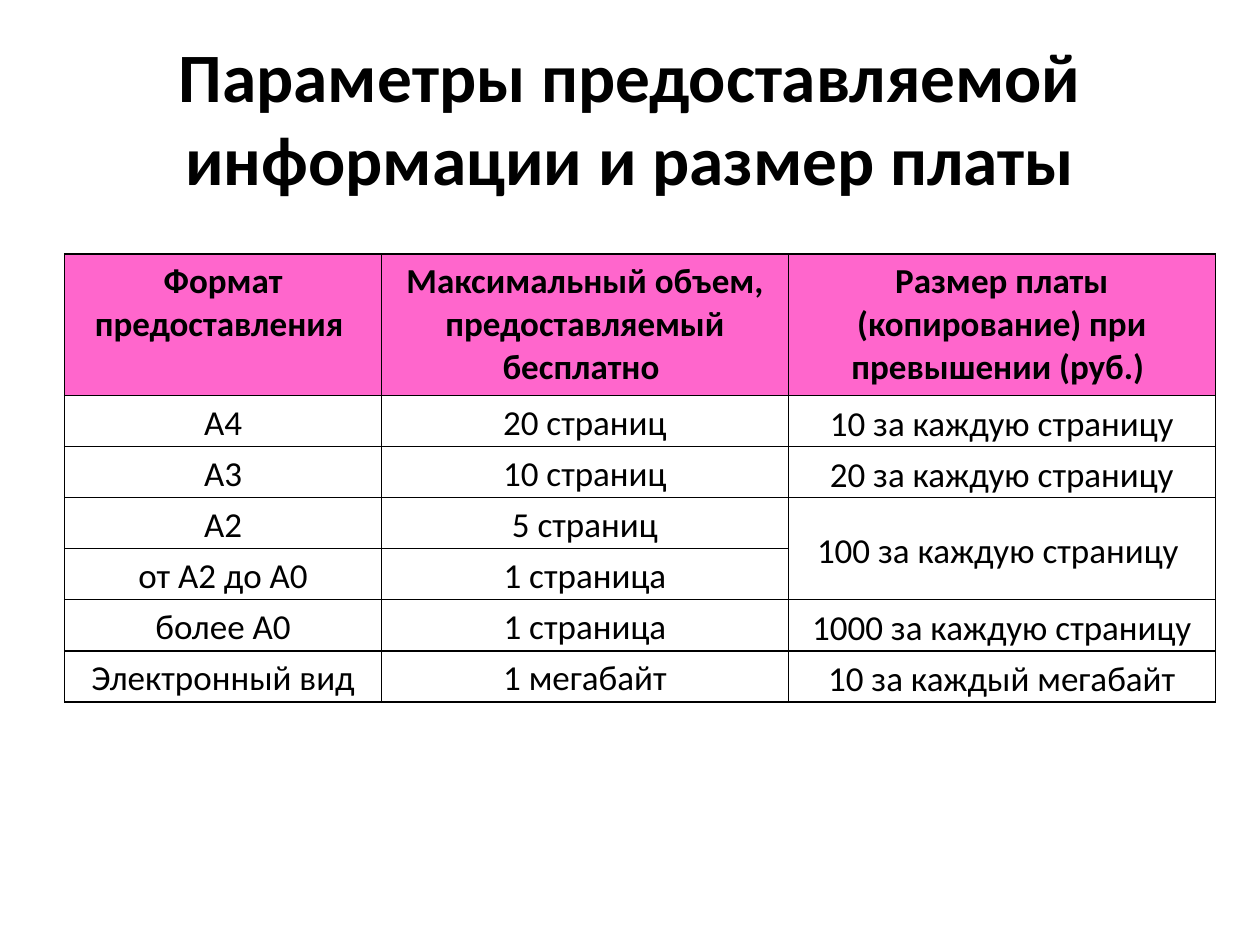
from lxml import etree
from pptx import Presentation
from pptx.dml.color import RGBColor
from pptx.enum import text as t
from pptx.oxml import ns
from pptx.util import Pt

FONT = "Calibri"
BLACK, PINK = "000000", "FF66CC"
COLUMN_WIDTHS = (181.2, 232.4, 244)
HEADER_HEIGHT, ROW_HEIGHT = 80.6, 29.2
HEADERS = (
    "Формат предоставления ",
    "Максимальный объем, предоставляемый бесплатно ",
    "Размер платы (копирование) при превышении (руб.) ",
)
TARIFFS = (
    ("А4", "20 страниц", "10 за каждую страницу"),
    ("А3", "10 страниц", "20 за каждую страницу"),
    ("А2", "5 страниц", "100 за каждую страницу "),
    ("от А2 до А0", "1 страница", ""),
    ("более А0", "1 страница", "1000 за каждую страницу"),
    ("Электронный вид", "1 мегабайт", "10 за каждый мегабайт"),
)


def color(hex_code):
    return RGBColor.from_string(hex_code)


def format_text(frame, size, bold):
    for paragraph in frame.paragraphs:
        paragraph.alignment = t.PP_ALIGN.CENTER
        for run in paragraph.runs:
            run.font.name = FONT
            run.font.size = Pt(size)
            run.font.bold = bold
            run.font.color.rgb = color(BLACK)


def add_borders(cell):
    properties = cell._tc.get_or_add_tcPr()
    for side in ("lnL", "lnR", "lnT", "lnB"):
        border = etree.SubElement(properties, ns.qn(f"a:{side}"), w=str(Pt(1)))
        fill = etree.SubElement(border, ns.qn("a:solidFill"))
        etree.SubElement(fill, ns.qn("a:srgbClr"), val=BLACK)


def format_header(cell):
    format_text(cell.text_frame, 20, True)
    cell.fill.solid()
    cell.fill.fore_color.rgb = color(PINK)


def format_tariff(cell, is_price):
    format_text(cell.text_frame, 20, False)
    cell.text_frame.paragraphs[0].line_spacing = 1.15
    cell.margin_left = cell.margin_right = Pt(5)
    cell.margin_top = cell.margin_bottom = 0
    if is_price:
        cell.vertical_anchor = t.MSO_ANCHOR.MIDDLE
    cell.fill.background()


def add_title(slide, wording):
    title = slide.shapes.title
    title.left, title.top, title.width, title.height = map(Pt, (36, 21.6, 648, 90))
    title.text_frame.text = wording
    title.text_frame.auto_size = t.MSO_AUTO_SIZE.NONE
    title.text_frame.vertical_anchor = t.MSO_ANCHOR.MIDDLE
    format_text(title.text_frame, 39.6, True)


def add_tariff_table(slide):
    rows = (HEADERS, *TARIFFS)
    heights = [HEADER_HEIGHT] + [ROW_HEIGHT] * len(TARIFFS)
    table = slide.shapes.add_table(
        len(rows), len(HEADERS), Pt(36.9), Pt(145.2),
        Pt(sum(COLUMN_WIDTHS)), Pt(sum(heights)),
    ).table
    table.first_row = table.horz_banding = False
    for column, width in zip(table.columns, COLUMN_WIDTHS):
        column.width = Pt(width)
    for row, height in zip(table.rows, heights):
        row.height = Pt(height)
    for i, wordings in enumerate(rows):
        for j, wording in enumerate(wordings):
            cell = table.cell(i, j)
            cell.text_frame.text = wording
            add_borders(cell)
            if i == 0:
                format_header(cell)
            else:
                format_tariff(cell, is_price=j == 2)
    table.cell(3, 2).merge(table.cell(4, 2))


def main():
    deck = Presentation()
    deck.slide_width, deck.slide_height = Pt(720), Pt(540)
    slide = deck.slides.add_slide(deck.slide_layouts[5])
    add_title(slide, "Параметры предоставляемой информации и размер платы")
    add_tariff_table(slide)
    deck.save("out.pptx")


if __name__ == "__main__":
    main()
